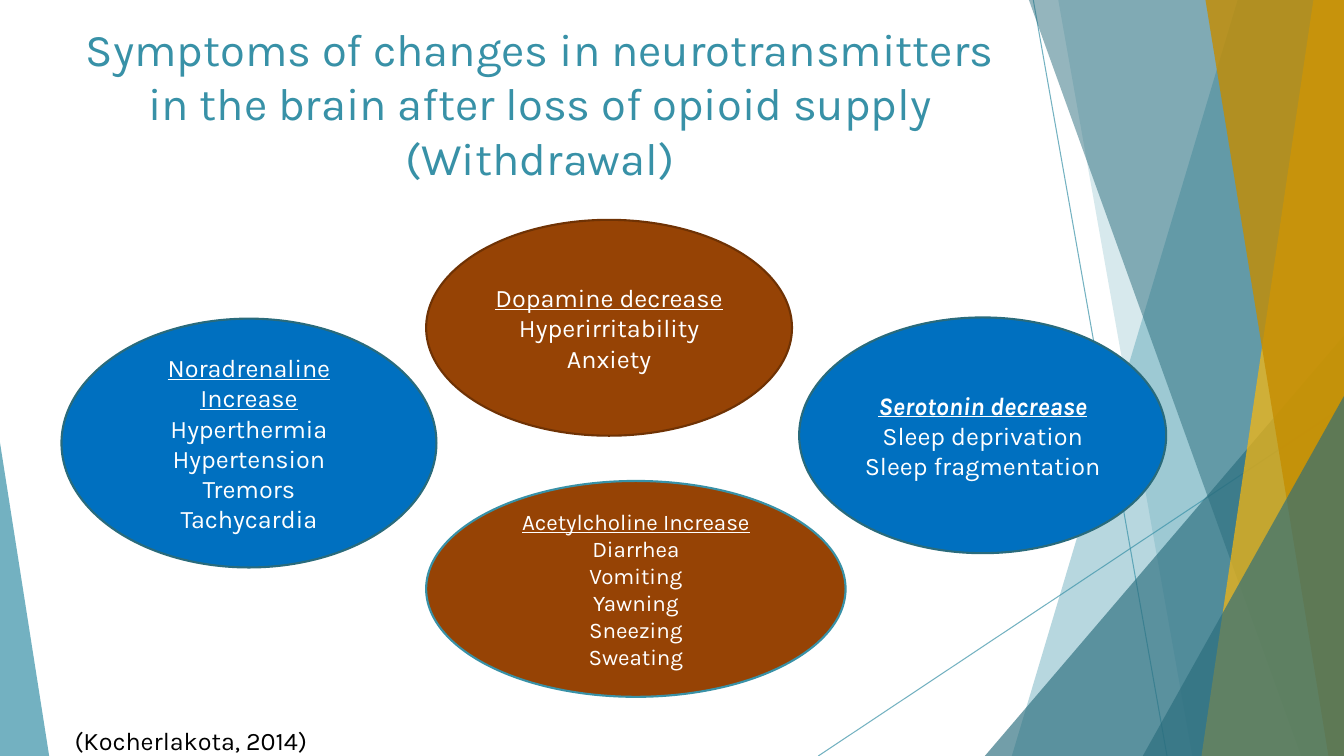
from lxml import etree
from pptx import Presentation
from pptx import util as u
from pptx.dml.color import RGBColor
from pptx.enum import shapes, text
from pptx.oxml.ns import qn

WIDTH, HEIGHT = 33.87, 19.05
COLORS = {
    "teal": "3891A7", "deep": "2A6D7D", "edge": "296B7C",
    "gold": "FEB80A", "ochre": "C58D01", "blue": "0070C0",
    "brown": "964305", "umber": "6F3204", "white": "FFFFFF", "black": "000000",
}


class SlideBuilder:
    font = "Karla"

    def __init__(self, slide):
        self.shapes = slide.shapes

    def paint(self, fmt, color, opacity=100):
        """Apply a solid colour, with opacity in percent."""
        fmt.solid()
        fmt.fore_color.rgb = RGBColor.from_string(COLORS[color])
        if opacity < 100:
            for clr in fmt._xPr.iter(qn("a:srgbClr")):
                etree.SubElement(clr, qn("a:alpha"), val=str(opacity * 1000))

    def finish(self, sp, color, opacity=100):
        sp.shadow.inherit = False
        self.paint(sp.fill, color, opacity)
        sp.line.fill.background()

    def line(self, x1, y1, x2, y2):
        cx = self.shapes.add_connector(
            shapes.MSO_CONNECTOR.STRAIGHT, *map(u.Cm, (x1, y1, x2, y2)))
        cx.line.width = u.Pt(0.75)
        self.paint(cx.line.fill, "teal", 70)
        etree.SubElement(cx._element.spPr, qn("a:effectLst"))

    def pane(self, top_x, bottom_x, color, opacity):
        """Full-height pane from a slanted left side to the slide's right edge."""
        fb = self.shapes.build_freeform(u.Cm(top_x), 0)
        corners = [(WIDTH, 0), (WIDTH, HEIGHT), (bottom_x, HEIGHT)]
        fb.add_line_segments([(u.Cm(x), u.Cm(y)) for x, y in corners])
        self.finish(fb.convert_to_shape(), color, opacity)

    def triangle(self, x, y, w, apex, color, opacity):
        """Triangle standing on the slide's bottom edge."""
        sp = self.shapes.add_shape(shapes.MSO_SHAPE.ISOSCELES_TRIANGLE,
                                   *map(u.Cm, (x, y, w, HEIGHT - y)))
        sp.adjustments[0] = apex
        self.finish(sp, color, opacity)

    def run(self, p, words, size, color, **style):
        r = p.add_run()
        r.text = words
        r.font.name = self.font
        r.font.size = u.Pt(size)
        r.font.color.rgb = RGBColor.from_string(COLORS[color])
        for name, value in style.items():
            setattr(r.font, name, value)

    def label(self, box, words, size, color, align):
        tf = self.shapes.add_textbox(*map(u.Cm, box)).text_frame
        tf.word_wrap = True
        p = tf.paragraphs[0]
        p.alignment = align
        self.run(p, words, size, color)

    def ellipse(self, box, fill, edge, heading, symptoms, size=18, strong=False):
        sp = self.shapes.add_shape(shapes.MSO_SHAPE.OVAL, *map(u.Cm, box))
        self.finish(sp, fill)
        self.paint(sp.line.fill, edge)
        sp.line.width = u.Pt(1.5)
        tf = sp.text_frame
        tf.word_wrap = True
        tf.vertical_anchor = text.MSO_ANCHOR.MIDDLE
        for i, words in enumerate(heading + symptoms):
            p = tf.add_paragraph() if i else tf.paragraphs[0]
            p.alignment = text.PP_ALIGN.CENTER
            is_heading = i < len(heading)
            self.run(p, words, size, "white", underline=is_heading,
                     bold=strong and is_heading, italic=strong and is_heading)


def main():
    prs = Presentation()
    prs.slide_width, prs.slide_height = u.Cm(WIDTH), u.Cm(HEIGHT)
    s = SlideBuilder(prs.slides.add_slide(prs.slide_layouts[6]))

    # Faceted background
    s.line(26.04, 0, 29.41, HEIGHT)
    s.line(WIDTH, 10.24, 20.62, HEIGHT)
    s.pane(31.19, 25.5, "teal", 36)
    s.pane(26.67, 30.05, "teal", 20)
    s.triangle(24.82, 8.46, 9.05, 1, "deep", 66)
    s.pane(25.93, 32.79, "deep", 50)
    s.pane(33.1, 30.28, "gold", 70)
    s.pane(30.38, 33.48, "ochre", 80)
    s.triangle(28.8, 9.98, 5.07, 1, "deep", 66)
    s.triangle(0, 11.15, 1.24, 0, "teal", 70)

    # Title and citation
    s.label((1.52, 0.41, 24.18, 4.19),
            "Symptoms of changes in neurotransmitters in the brain "
            "after loss of opioid supply (Withdrawal)",
            32.4, "teal", text.PP_ALIGN.CENTER)
    s.label((1.63, 18.16, 15.77, 1.8), "(Kocherlakota, 2014)",
            18, "black", text.PP_ALIGN.LEFT)

    # Neurotransmitters and their symptoms
    s.ellipse((1.55, 8.03, 9.45, 6.27), "blue", "edge",
              ["Noradrenaline", "Increase"],
              ["Hyperthermia", "Hypertension", "Tremors", "Tachycardia"])
    s.ellipse((10.74, 5.54, 9.22, 5.44), "brown", "umber",
              ["Dopamine decrease"], ["Hyperirritability", "Anxiety"])
    s.ellipse((10.74, 12.12, 10.57, 5.44), "brown", "teal",
              ["Acetylcholine Increase"],
              ["Diarrhea", "Vomiting", "Yawning", "Sneezing", "Sweating"], size=16)
    s.ellipse((20.14, 8, 9.25, 5.94), "blue", "edge",
              ["Serotonin decrease"],
              ["Sleep deprivation", "Sleep fragmentation"], strong=True)

    prs.save("out.pptx")


if __name__ == "__main__":
    main()
